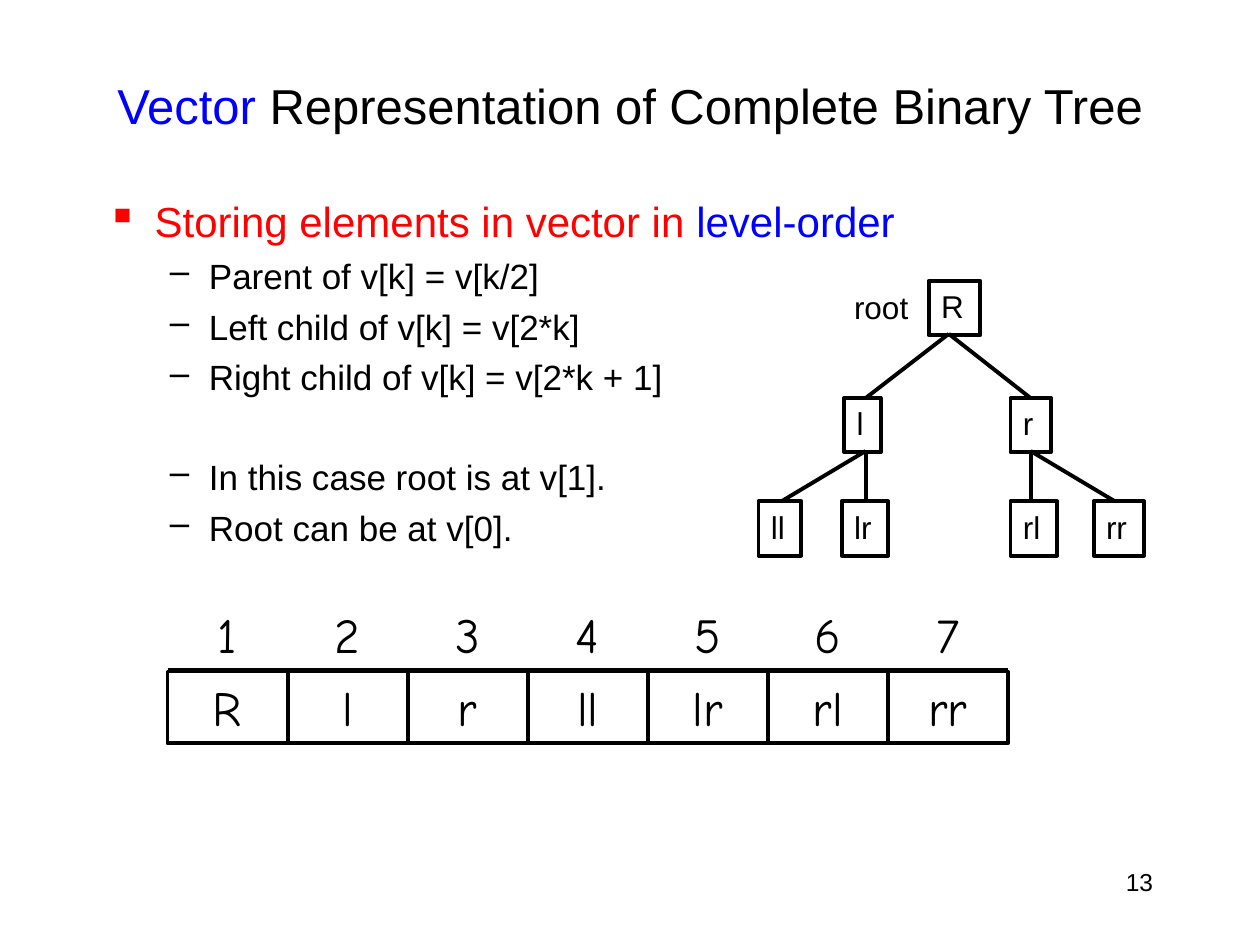
from dataclasses import dataclass

from lxml import etree
from pptx import Presentation
from pptx.dml.color import RGBColor
from pptx.enum.shapes import MSO_CONNECTOR, MSO_SHAPE
from pptx.enum.text import MSO_ANCHOR, PP_ALIGN
from pptx.oxml.ns import qn
from pptx.util import Inches, Pt

RECTANGLE = MSO_SHAPE.RECTANGLE
STRAIGHT = MSO_CONNECTOR.STRAIGHT
LEFT, CENTER, RIGHT = PP_ALIGN.LEFT, PP_ALIGN.CENTER, PP_ALIGN.RIGHT
TOP, MIDDLE = MSO_ANCHOR.TOP, MSO_ANCHOR.MIDDLE


@dataclass(frozen=True)
class Theme:
    ink: RGBColor = RGBColor(0, 0, 0)
    accent: RGBColor = RGBColor(0, 0, 255)
    emphasis: RGBColor = RGBColor(255, 0, 0)
    body_font: str = "Arial"
    array_font: str = "Comic Neue"
    title_size: int = 28
    heading_size: int = 24
    point_size: int = 20
    node_size: int = 18
    array_size: int = 28
    number_size: int = 14
    line_width: float = 2.25


class SlideBuilder:
    def __init__(self, slide, theme):
        self.slide = slide
        self.theme = theme

    def fill_paragraph(self, paragraph, runs, size, font=None, align=LEFT, before=0):
        """Add (text, colour) runs; a lone colour goes on the paragraph."""
        paragraph.alignment = align
        paragraph.space_before = Pt(before)
        paragraph.font.size = Pt(size)
        paragraph.font.name = font or self.theme.body_font
        for text, color in runs:
            run = paragraph.add_run()
            run.text = text
            target = paragraph if len(runs) == 1 else run
            target.font.color.rgb = color

    def textbox(self, left, top, width, height, wrap=True, anchor=TOP):
        box = self.slide.shapes.add_textbox(
            Inches(left), Inches(top), Inches(width), Inches(height))
        box.text_frame.word_wrap = wrap
        box.text_frame.vertical_anchor = anchor
        return box.text_frame

    def label(self, text, left, top, width, height, size, wrap=True, **style):
        frame = self.textbox(left, top, width, height, wrap)
        self.fill_paragraph(frame.paragraphs[0], [(text, self.theme.ink)], size, **style)

    def box(self, text, left, top, width, height, size, wrap=True, **style):
        """Draw an outlined, unfilled rectangle holding text."""
        shape = self.slide.shapes.add_shape(
            RECTANGLE, Inches(left), Inches(top), Inches(width), Inches(height))
        shape.shadow.inherit = False
        shape.fill.background()
        shape.line.color.rgb = self.theme.ink
        shape.line.width = Pt(self.theme.line_width)
        frame = shape.text_frame
        frame.word_wrap = wrap
        frame.vertical_anchor = TOP
        self.fill_paragraph(frame.paragraphs[0], [(text, self.theme.ink)], size, **style)

    def line(self, x1, y1, x2, y2):
        connector = self.slide.shapes.add_connector(
            STRAIGHT, Inches(x1), Inches(y1), Inches(x2), Inches(y2))
        connector.line.color.rgb = self.theme.ink
        connector.line.width = Pt(self.theme.line_width)
        etree.SubElement(connector._element.spPr, qn("a:effectLst"))

    def bullet(self, paragraph, symbol, margin, hanging):
        properties = paragraph._p.get_or_add_pPr()
        properties.set("marL", str(Inches(margin)))
        properties.set("indent", str(-Inches(hanging)))
        mark = etree.Element(qn("a:buChar"), char=symbol)
        defaults = properties.find(qn("a:defRPr"))
        defaults.addprevious(mark)


def add_text(builder):
    theme = builder.theme
    title = builder.textbox(0.75, 0.42, 8.5, 0.83, anchor=MIDDLE)
    builder.fill_paragraph(title.paragraphs[0],
                           [("Vector", theme.accent),
                            (" Representation of Complete Binary Tree", theme.ink)],
                           theme.title_size, align=CENTER)

    body = builder.textbox(0.75, 1.5, 8.5, 5.17)
    heading = body.paragraphs[0]
    builder.fill_paragraph(heading,
                           [("Storing elements in vector in ", theme.emphasis),
                            ("level-order", theme.accent)],
                           theme.heading_size, before=3)
    builder.bullet(heading, "▪", 0.38, 0.38)

    normal_gap, group_gap = 5, 33
    points = [
        ("Parent of v[k] = v[k/2]", normal_gap),
        ("Left child of v[k] = v[2*k]", normal_gap),
        ("Right child of v[k] = v[2*k + 1]", normal_gap),
        ("In this case root is at v[1].", group_gap),
        ("Root can be at v[0].", normal_gap),
    ]
    for text, gap in points:
        point = body.add_paragraph()
        point.level = 1
        builder.fill_paragraph(point, [(text, theme.ink)], theme.point_size, before=gap)
        builder.bullet(point, "–", 0.81, 0.31)

    builder.label("13", 7.17, 6.83, 2.08, 0.5, theme.number_size, align=RIGHT)


def add_tree(builder):
    """Draw the tree in level order, so the parent of node k is node k // 2."""
    size = builder.theme.node_size
    level_tops = [2.23, 3.16, 3.98]
    node_height = 0.43
    # name, left, width, x where the edges meet
    nodes = [
        ("R", 7.37, 0.41, 7.53),
        ("l", 6.7, 0.29, 6.87),
        ("r", 8.02, 0.32, 8.18),
        ("ll", 6.02, 0.34, 6.2),
        ("lr", 6.68, 0.37, 6.87),
        ("rl", 8.02, 0.37, 8.18),
        ("rr", 8.68, 0.4, 8.85),
    ]
    for k, (name, left, width, joint) in enumerate(nodes, start=1):
        level = k.bit_length() - 1
        top = level_tops[level]
        builder.box(name, left, top, width, node_height, size, wrap=False)
        if level:
            parent_joint = nodes[k // 2 - 1][3]
            parent_bottom = level_tops[level - 1] + node_height - 0.01
            builder.line(parent_joint, parent_bottom, joint, top)
    builder.label("root", 6.68, 2.24, 0.63, 0.4, size, wrap=False)


def add_vector(builder):
    elements = ["R", "l", "r", "ll", "lr", "rl", "rr"]
    left, right = 1.33, 8
    index_top, cell_top, height = 4.75, 5.33, 0.57
    width = (right - left) / len(elements)
    style = dict(size=builder.theme.array_size, font=builder.theme.array_font,
                 align=CENTER, before=3)
    for index, element in enumerate(elements):
        x = left + index * width
        builder.label(str(index + 1), x, index_top, width, height, **style)
        builder.box(element, x, cell_top, width, height, **style)
    index_bottom = index_top + height
    builder.line(left, index_bottom, right, index_bottom)


def main():
    presentation = Presentation()
    presentation.slide_width = Inches(10)
    presentation.slide_height = Inches(7.5)
    slide = presentation.slides.add_slide(presentation.slide_layouts[6])
    builder = SlideBuilder(slide, Theme())
    add_text(builder)
    add_tree(builder)
    add_vector(builder)
    presentation.save("out.pptx")


if __name__ == "__main__":
    main()
